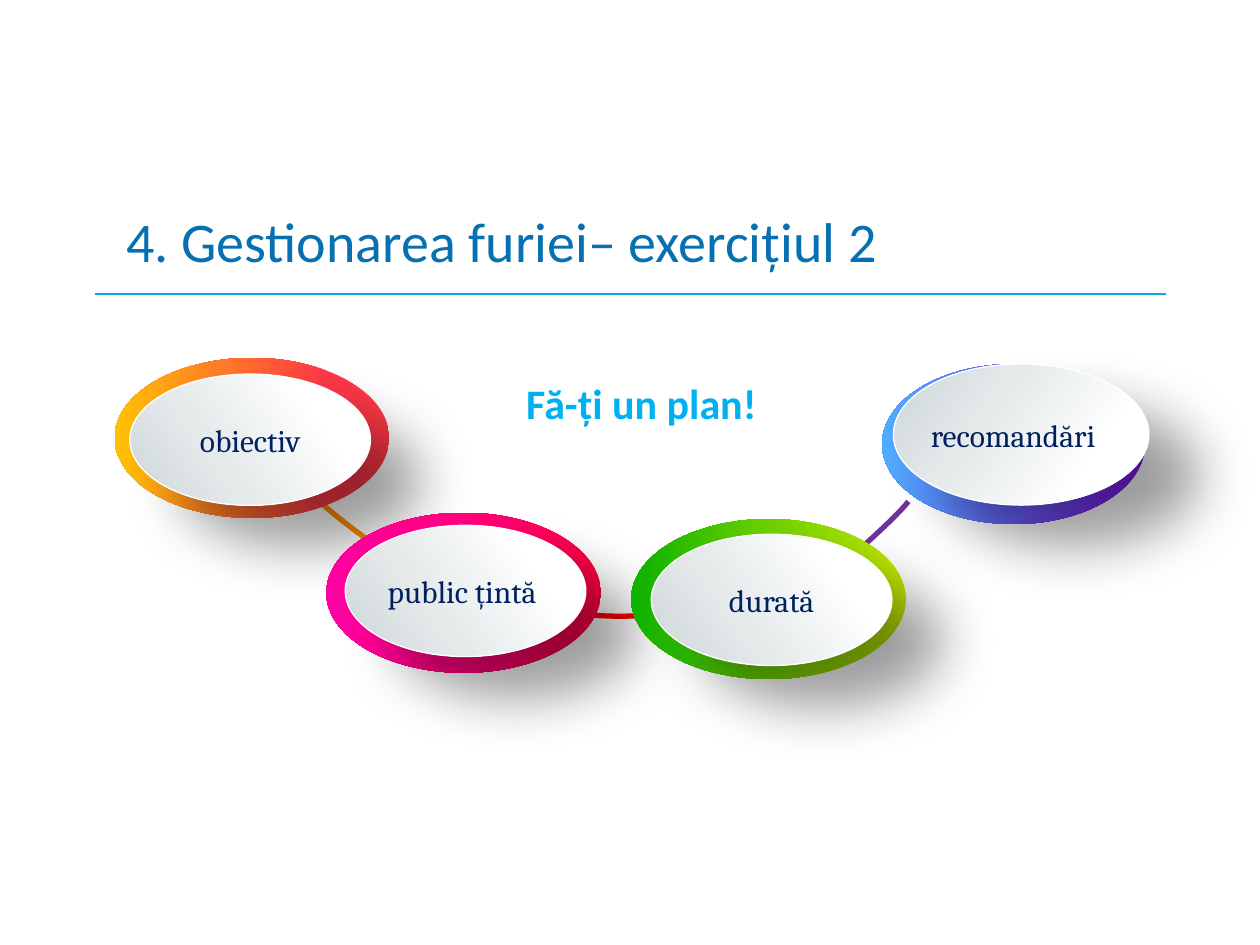
from lxml.etree import SubElement
from pptx import Presentation
from pptx.dml.color import RGBColor
from pptx.enum.shapes import MSO_CONNECTOR, MSO_SHAPE
from pptx.enum.text import MSO_ANCHOR, PP_ALIGN
from pptx.oxml.ns import qn
from pptx.util import Pt

WHITE = RGBColor(0xFF, 0xFF, 0xFF)
BLACK = RGBColor(0, 0, 0)
NAVY = RGBColor(0x00, 0x20, 0x60)
TITLE_BLUE = RGBColor(0x07, 0x70, 0xB1)
RULE_BLUE = RGBColor(0x0B, 0xA7, 0xDF)
SKY = RGBColor(0x00, 0xB0, 0xF0)
PURPLE = RGBColor(0x70, 0x30, 0xA0)
RED = RGBColor(0xFF, 0x00, 0x00)
ORANGE = RGBColor(0xFF, 0x8A, 0x00)
SILVER = RGBColor(0xCD, 0xD5, 0xD8)
PALE = RGBColor(0xE6, 0xEA, 0xEB)

TITLE = "4. Gestionarea furiei– exercițiul 2"
CALL = "Fă-ți un plan!"
FACE_STOPS = [(0, WHITE), (23, WHITE), (63, PALE), (100, SILVER)]
RING_SIZE, FACE_SIZE = (157, 91.5), (137.5, 75)

RECOMMENDATIONS = {
    "text": "recomandări", "align": PP_ALIGN.LEFT, "flip": False,
    "ring": (504, 208, 150.5, 91.5), "face": (510.5, 208, 146, 80.6),
    "angle": 180,
    "stops": [(0, RGBColor(0x80, 0x16, 0xEF)), (52, RGBColor(0x67, 0x61, 0xF7)),
              (100, RGBColor(0x4F, 0xAC, 0xFE))],
    "face_stops": [(0, SILVER), (37, PALE), (77, WHITE), (100, WHITE)],
}


def flipped(text, ring, face, stops):
    return {"text": text, "align": PP_ALIGN.CENTER, "flip": True,
            "ring": ring + RING_SIZE, "face": face + FACE_SIZE,
            "angle": 0, "stops": stops, "face_stops": FACE_STOPS}


STEPS = [
    flipped("obiectiv", (65.5, 204.5), (74.2, 213.8),
            [(0, RGBColor(0xFF, 0x38, 0x47)), (23, RGBColor(0xFF, 0x38, 0x47)),
             (63, RGBColor(0xFF, 0x7D, 0x25)), (100, RGBColor(0xFF, 0xC2, 0x03))]),
    flipped("public țintă ", (186.5, 293), (197.3, 300.2),
            [(0, RGBColor(0xFF, 0x00, 0x40)), (37, RGBColor(0xFF, 0x00, 0x71)),
             (100, RGBColor(0xFF, 0x00, 0xA2))]),
    flipped("durată", (360.7, 296.6), (372.2, 305.3),
            [(1, RGBColor(0xC3, 0xEA, 0x03)), (53, RGBColor(0x67, 0xCE, 0x02)),
             (100, RGBColor(0x0C, 0xB1, 0x00))]),
]

PURPLE_LINKS = [
    [(519.1, 286.6), (516.2, 290.2), (513.4, 293), (510.5, 295.9),
     (501.1, 305.3), (491, 313.9), (481.7, 322.6)],
    [(481.7, 321.8), (468, 331.2), (454.3, 338.4), (439.9, 343.4)],
]
RED_LINK = [(323.3, 349.9), (339.1, 352.1), (355, 352.8), (370.8, 351.4),
            (378.7, 350.6), (386.6, 349.9), (394.6, 349.2)]
ORANGE_LINK = [(177.8, 282.2), (193, 296.6), (211.7, 310.3), (231.8, 322.6)]


def bezier(points, steps=12):
    for first in range(0, len(points) - 1, 3):
        a, b, c, d = points[first:first + 4]
        for step in range(1, steps + 1):
            t = step / steps
            u = 1 - t
            yield tuple(round(100 * (u**3 * p + 3 * u * u * t * q + 3 * u * t * t * r + t**3 * s))
                        for p, q, r, s in zip(a, b, c, d))


def add_link(page, points, color):
    x, y = points[0]
    builder = page.shapes.build_freeform(round(x * 100), round(y * 100), scale=Pt(1) / 100)
    builder.add_line_segments(list(bezier(points)), close=False)
    link = builder.convert_to_shape()
    link.fill.background()
    link.line.color.rgb = color
    link.line.width = Pt(3)
    link.shadow.inherit = False


def add_color(parent, color):
    return SubElement(parent, qn("a:srgbClr"), val=str(color))


def add_ellipse(page, place, stops, angle, flip):
    ellipse = page.shapes.add_shape(MSO_SHAPE.OVAL, *map(Pt, place))
    ellipse.shadow.inherit = False
    ellipse.line.fill.background()
    ellipse.fill.gradient()
    properties = ellipse.element.spPr
    if flip:
        properties.find(qn("a:xfrm")).set("flipH", "1")
    gradient = properties.find(qn("a:gradFill"))
    for child in list(gradient):
        gradient.remove(child)
    stop_list = SubElement(gradient, qn("a:gsLst"))
    for position, color in stops:
        add_color(SubElement(stop_list, qn("a:gs"), pos=str(position * 1000)), color)
    SubElement(gradient, qn("a:lin"), ang=str(angle * 60000), scaled="0")
    return ellipse


def add_run(para, text, font, size, color, bold=False):
    span = para.add_run()
    span.text = text
    span.font.name = font
    span.font.size = Pt(size)
    span.font.bold = bold
    span.font.color.rgb = color


def add_step(page, step):
    add_ellipse(page, step["ring"], step["stops"], step["angle"], step["flip"])
    face = add_ellipse(page, step["face"], step["face_stops"], 35, step["flip"])
    face.line.color.rgb = WHITE
    face.line.width = Pt(0.75)
    shadow = SubElement(face.element.spPr.find(qn("a:effectLst")), qn("a:outerShdw"),
                        blurRad=str(Pt(33)), dist=str(Pt(36.7)), dir=str(39 * 60000),
                        algn="tl", rotWithShape="0")
    SubElement(add_color(shadow, BLACK), qn("a:alpha"), val="38000")
    frame = face.text_frame
    frame.margin_left = frame.margin_right = frame.margin_top = frame.margin_bottom = 0
    frame.vertical_anchor = MSO_ANCHOR.MIDDLE
    frame.word_wrap = True
    para = frame.paragraphs[0]
    para.alignment = step["align"]
    add_run(para, step["text"], "Cambria", 18, NAVY)


def main():
    deck = Presentation()
    deck.slide_width, deck.slide_height = Pt(720), Pt(540)
    page = deck.slides.add_slide(deck.slide_layouts[5])

    title = page.shapes.title
    title.left, title.top, title.width, title.height = map(Pt, (64.8, 110.2, 612, 54))
    title.text_frame.vertical_anchor = MSO_ANCHOR.MIDDLE
    para = title.text_frame.paragraphs[0]
    para.alignment = PP_ALIGN.LEFT
    add_run(para, TITLE, "Calibri", 32, TITLE_BLUE)

    rule = page.shapes.add_connector(MSO_CONNECTOR.STRAIGHT, *map(Pt, (54, 168, 666, 168)))
    rule.line.color.rgb = RULE_BLUE
    rule.line.width = Pt(0.75)
    SubElement(rule.element.spPr, qn("a:effectLst"))

    for points in PURPLE_LINKS:
        add_link(page, points, PURPLE)
    add_step(page, RECOMMENDATIONS)
    add_link(page, RED_LINK, RED)
    add_link(page, ORANGE_LINK, ORANGE)
    for step in STEPS:
        add_step(page, step)

    box = page.shapes.add_textbox(*map(Pt, (229, 208, 275, 39)))
    box.text_frame.word_wrap = True
    para = box.text_frame.paragraphs[0]
    para.alignment = PP_ALIGN.CENTER
    para.line_spacing = 1.15
    para.space_after = Pt(6)
    add_run(para, CALL, "Calibri", 24, SKY, bold=True)

    deck.save("out.pptx")


if __name__ == "__main__":
    main()
